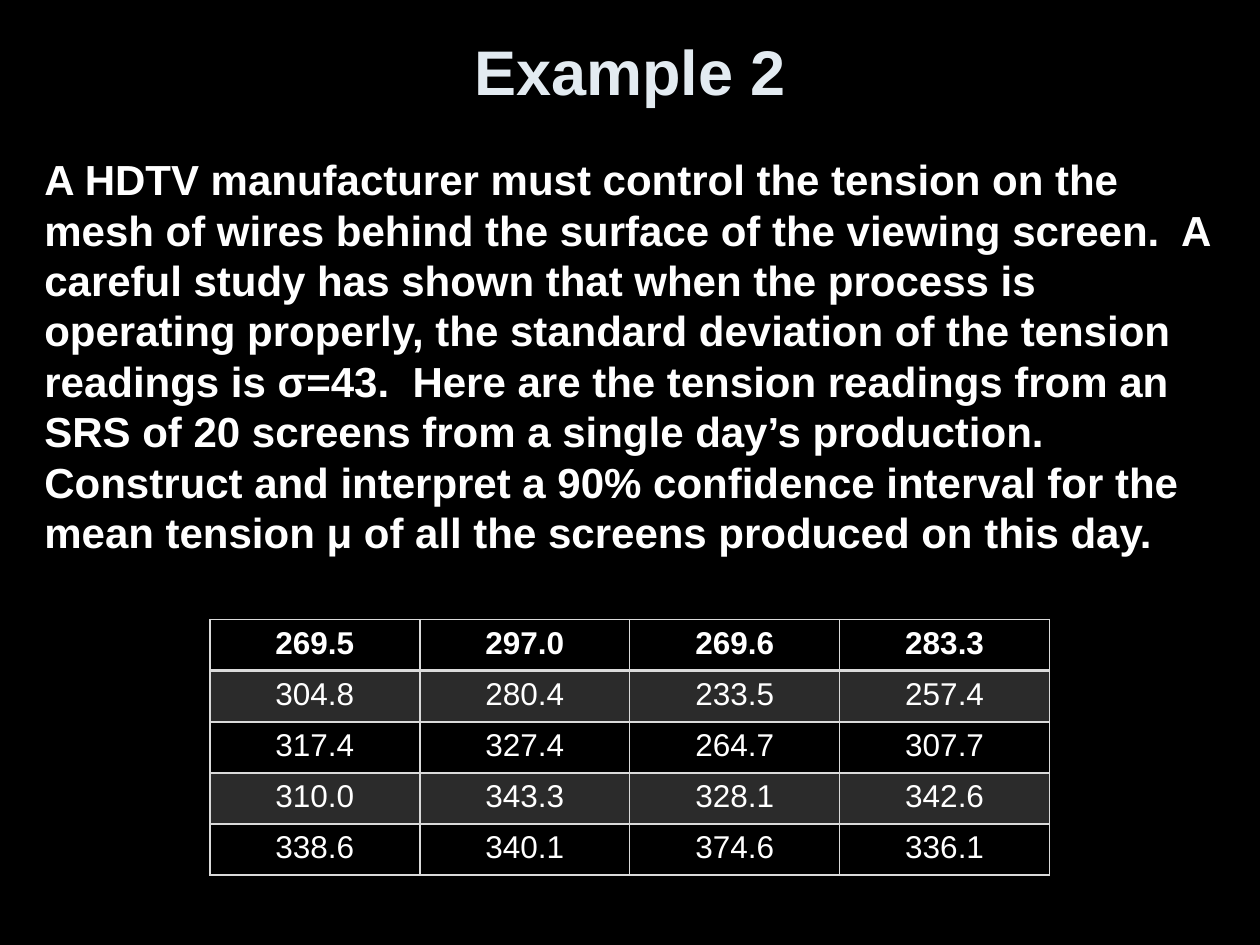
import pptx
import pptx.dml.color
import pptx.enum.text
import pptx.oxml
import pptx.oxml.ns
import pptx.util
from pptx.util import Cm

FONT = "Arial"
WHITE, PALE, GREY = "FFFFFF", "E3EBF1", "DADADA"

PROBLEM = (
    "A HDTV manufacturer must control the tension on the mesh of wires behind "
    "the surface of the viewing screen.  A careful study has shown that when "
    "the process is operating properly, the standard deviation of the tension "
    "readings is σ=43.  Here are the tension readings from an SRS of 20 screens "
    "from a single day’s production.  Construct and interpret a 90% confidence "
    "interval for the mean tension μ of all the screens produced on this day."
)
READINGS = [
    ["269.5", "297.0", "269.6", "283.3"],
    ["304.8", "280.4", "233.5", "257.4"],
    ["317.4", "327.4", "264.7", "307.7"],
    ["310.0", "343.3", "328.1", "342.6"],
    ["338.6", "340.1", "374.6", "336.1"],
]


def rgb(value):
    return pptx.dml.color.RGBColor.from_string(value)


def format_runs(p, size, color, bold):
    for r in p.runs:
        r.font.name = FONT
        r.font.size = pptx.util.Pt(size)
        r.font.bold = bold
        r.font.color.rgb = rgb(color)


def place(sp, box):
    sp.left, sp.top, sp.width, sp.height = box


def add_title(s, box, text):
    sp = s.shapes.title
    place(sp, box)
    tf = sp.text_frame
    tf.text = text
    tf.auto_size = pptx.enum.text.MSO_AUTO_SIZE.NONE
    tf.vertical_anchor = pptx.enum.text.MSO_ANCHOR.MIDDLE
    p = tf.paragraphs[0]
    p.alignment = pptx.enum.text.PP_ALIGN.CENTER
    format_runs(p, 36, PALE, True)


def add_problem(s, box, text):
    sp = s.placeholders[1]
    place(sp, box)
    tf = sp.text_frame
    tf.text = text
    tf.auto_size = pptx.enum.text.MSO_AUTO_SIZE.NONE
    p = tf.paragraphs[0]
    p.space_before = pptx.util.Pt(0)
    # Plain paragraph: no bullet, no hanging indent
    pPr = p._p.get_or_add_pPr()
    pPr.set("marL", "0")
    pPr.set("indent", "0")
    pPr.append(pptx.oxml.parse_xml(f"<a:buNone {pptx.oxml.ns.nsdecls('a')}/>"))
    format_runs(p, 24, WHITE, True)


def set_borders(cell, widths):
    tcPr = cell._tc.get_or_add_tcPr()
    for side, width in zip("LRTB", widths):
        tcPr.append(pptx.oxml.parse_xml(
            f"<a:ln{side} {pptx.oxml.ns.nsdecls('a')} w='{pptx.util.Pt(width)}'>"
            f"<a:solidFill><a:srgbClr val='{GREY}'/></a:solidFill></a:ln{side}>"))


def shade(cell, color, percent):
    cell.fill.solid()
    cell.fill.fore_color.rgb = rgb(color)
    clr = cell._tc.tcPr.find(
        f"{pptx.oxml.ns.qn('a:solidFill')}/{pptx.oxml.ns.qn('a:srgbClr')}")
    clr.append(pptx.oxml.parse_xml(
        f"<a:alpha {pptx.oxml.ns.nsdecls('a')} val='{percent * 1000}'/>"))


def add_readings(s, box, rows):
    table = s.shapes.add_table(len(rows), len(rows[0]), *box).table
    table.horz_banding = False
    for i, row in enumerate(rows):
        for j, value in enumerate(row):
            cell = table.cell(i, j)
            # A thicker rule separates the first row from the rest
            set_borders(cell, (1, 1, 2 if i == 1 else 1, 2 if i == 0 else 1))
            if i % 2:
                shade(cell, GREY, 20)
            else:
                cell.fill.background()
            cell.text_frame.text = value
            p = cell.text_frame.paragraphs[0]
            p.alignment = pptx.enum.text.PP_ALIGN.CENTER
            format_runs(p, 18, WHITE, i == 0)


def main():
    prs = pptx.Presentation()
    prs.slide_width, prs.slide_height = Cm(25.4), Cm(19.05)
    s = prs.slides.add_slide(prs.slide_layouts[1])
    s.background.fill.solid()
    s.background.fill.fore_color.rgb = rgb("000000")

    add_title(s, (Cm(1.27), Cm(0.2), Cm(22.86), Cm(2.42)), "Example 2")
    add_problem(s, (Cm(0.64), Cm(2.97), Cm(24.13), Cm(8.89)), PROBLEM)
    add_readings(s, (Cm(4.23), Cm(12.49), Cm(16.93), Cm(5.15)), READINGS)

    prs.save("out.pptx")


if __name__ == "__main__":
    main()
